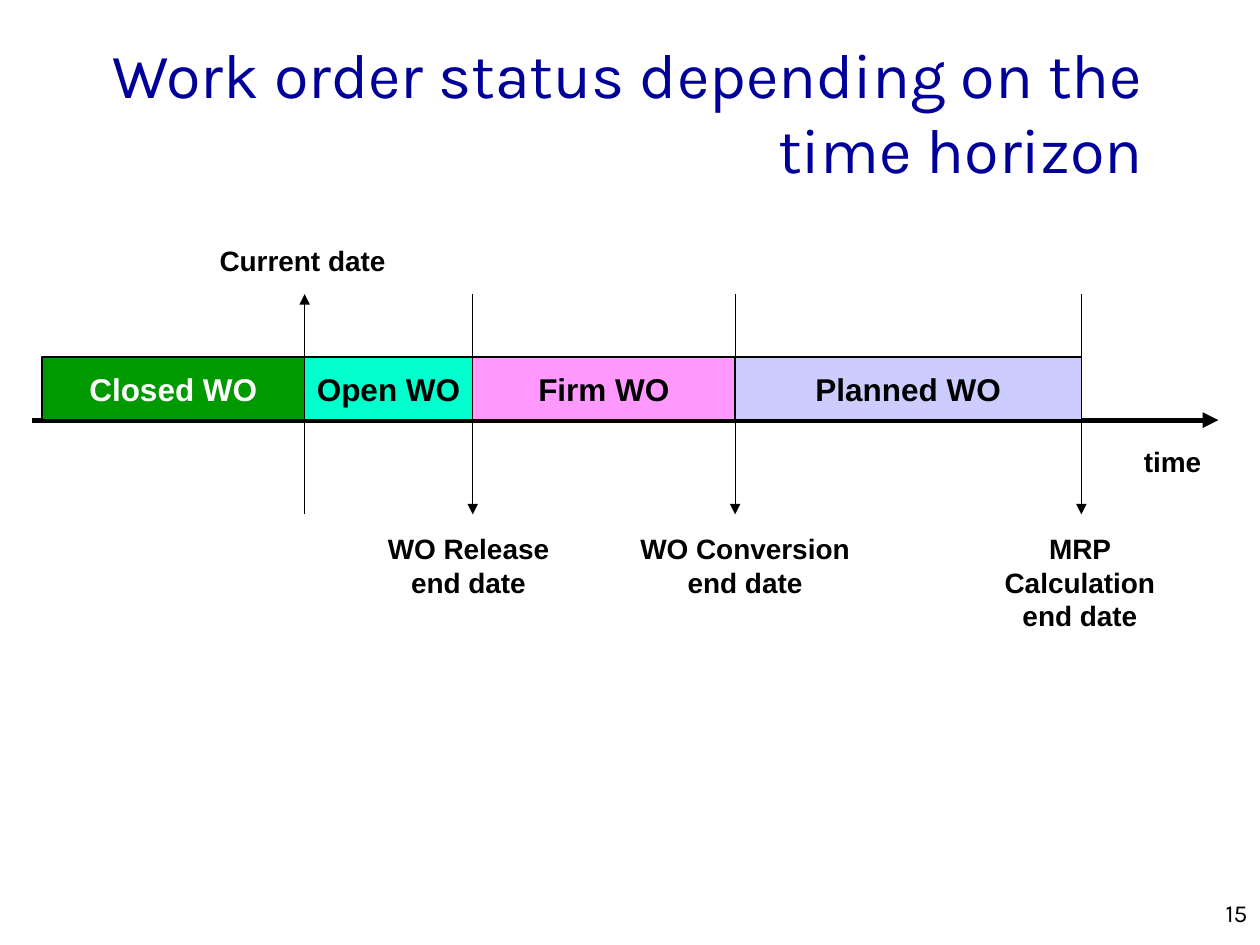
from lxml.etree import SubElement
from pptx import Presentation
from pptx.dml.color import RGBColor
from pptx.enum.shapes import MSO_CONNECTOR as Connector, MSO_SHAPE as Preset
from pptx.enum.text import MSO_ANCHOR as Anchor, MSO_AUTO_SIZE as AutoSize, PP_ALIGN as Align
from pptx.oxml.ns import qn
from pptx.util import Cm, Pt

COLORS = {
    "black": "000000", "white": "FFFFFF", "navy": "000099", "green": "009900",
    "aqua": "00FFCC", "pink": "FF99FF", "lavender": "CCCCFF",
}
TITLE = "Work order status depending on the time horizon"
STAGES = [
    ("Closed WO", 5.29, "green", "white"),
    ("Open WO", 3.39, "aqua", "black"),
    ("Firm WO", 5.29, "pink", "black"),
    ("Planned WO", 6.98, "lavender", "black"),
]
MILESTONES = [
    ("Current date", 4.17, 4.78, 3.86, 0.94, "headEnd", False),
    ("WO Release end date", 7.39, 10.59, 4.11, 1.63, "tailEnd", True),
    ("WO Conversion end date", 12.34, 10.59, 5.36, 1.63, "tailEnd", True),
    ("MRP Calculation end date", 19.89, 10.59, 3.76, 2.29, "tailEnd", True),
]
START, STAGE_TOP, STAGE_HEIGHT = 0.85, 7.2, 1.27
AXIS_LEFT, AXIS_RIGHT = 0.64, 24.56
MARK_TOP, MARK_BOTTOM = 5.93, 10.37
LABEL = {"name": "Arial", "size": Pt(16), "bold": True}
STAGE_LABEL = {**LABEL, "size": Pt(18)}
HEADING = {"name": "Karla", "size": Pt(36), "bold": False}
PAGE_LABEL = {**HEADING, "size": Pt(14)}


def rgb(color):
    return RGBColor.from_string(COLORS[color])


def write(shape, text, font_format, color="black", align=Align.CENTER, **frame_format):
    frame = shape.text_frame
    for key, value in frame_format.items():
        setattr(frame, key, value)
    paragraph = frame.paragraphs[0]
    paragraph.alignment = align
    run = paragraph.add_run()
    run.text = text
    for key, value in font_format.items():
        setattr(run.font, key, value)
    run.font.color.rgb = rgb(color)


def add_label(slide, box, text, font_format, **text_format):
    label = slide.shapes.add_textbox(*map(Cm, box))
    write(label, text, font_format, **text_format)


def add_arrow(slide, ends, width, arrow_end):
    arrow = slide.shapes.add_connector(Connector.STRAIGHT, *map(Cm, ends))
    arrow.line.color.rgb = rgb("black")
    arrow.line.width = Pt(width)
    SubElement(arrow.line._get_or_add_ln(), qn("a:" + arrow_end), type="triangle")
    SubElement(arrow._element.spPr, qn("a:effectLst"))


def add_stage(slide, left, name, width, fill, text_color):
    stage = slide.shapes.add_shape(
        Preset.RECTANGLE, *map(Cm, (left, STAGE_TOP, width, STAGE_HEIGHT)))
    stage.shadow.inherit = False
    stage.fill.solid()
    stage.fill.fore_color.rgb = rgb(fill)
    stage.line.color.rgb = rgb("black")
    stage.line.width = Pt(0.75)
    write(stage, name, STAGE_LABEL, text_color,
          word_wrap=False, vertical_anchor=Anchor.MIDDLE)


def main():
    deck = Presentation()
    deck.slide_width, deck.slide_height = Cm(25.4), Cm(19.05)
    slide = deck.slides.add_slide(deck.slide_layouts[5])

    title = slide.shapes.title
    title.left, title.top, title.width, title.height = map(Cm, (0.64, 0.64, 22.66, 3.18))
    write(title, TITLE, HEADING, "navy", Align.RIGHT, word_wrap=True,
          auto_size=AutoSize.NONE, vertical_anchor=Anchor.MIDDLE)

    axis = STAGE_TOP + STAGE_HEIGHT
    add_arrow(slide, (AXIS_LEFT, axis, AXIS_RIGHT, axis), 3, "tailEnd")

    left, boundaries = START, []
    for name, width, fill, text_color in STAGES:
        add_stage(slide, left, name, width, fill, text_color)
        left += width
        boundaries.append(left)

    for boundary, milestone in zip(boundaries, MILESTONES):
        name, *box, arrow_end, wraps = milestone
        add_arrow(slide, (boundary, MARK_TOP, boundary, MARK_BOTTOM), 0.75, arrow_end)
        add_label(slide, box, name, LABEL, word_wrap=wraps)

    add_label(slide, (22.81, 8.84, 1.68, 0.94), "time", LABEL,
              align=Align.LEFT, word_wrap=False)
    add_label(slide, (20.12, 17.98, 5.28, 0.64), "15", PAGE_LABEL,
              align=Align.RIGHT, word_wrap=True)
    deck.save("out.pptx")


if __name__ == "__main__":
    main()
